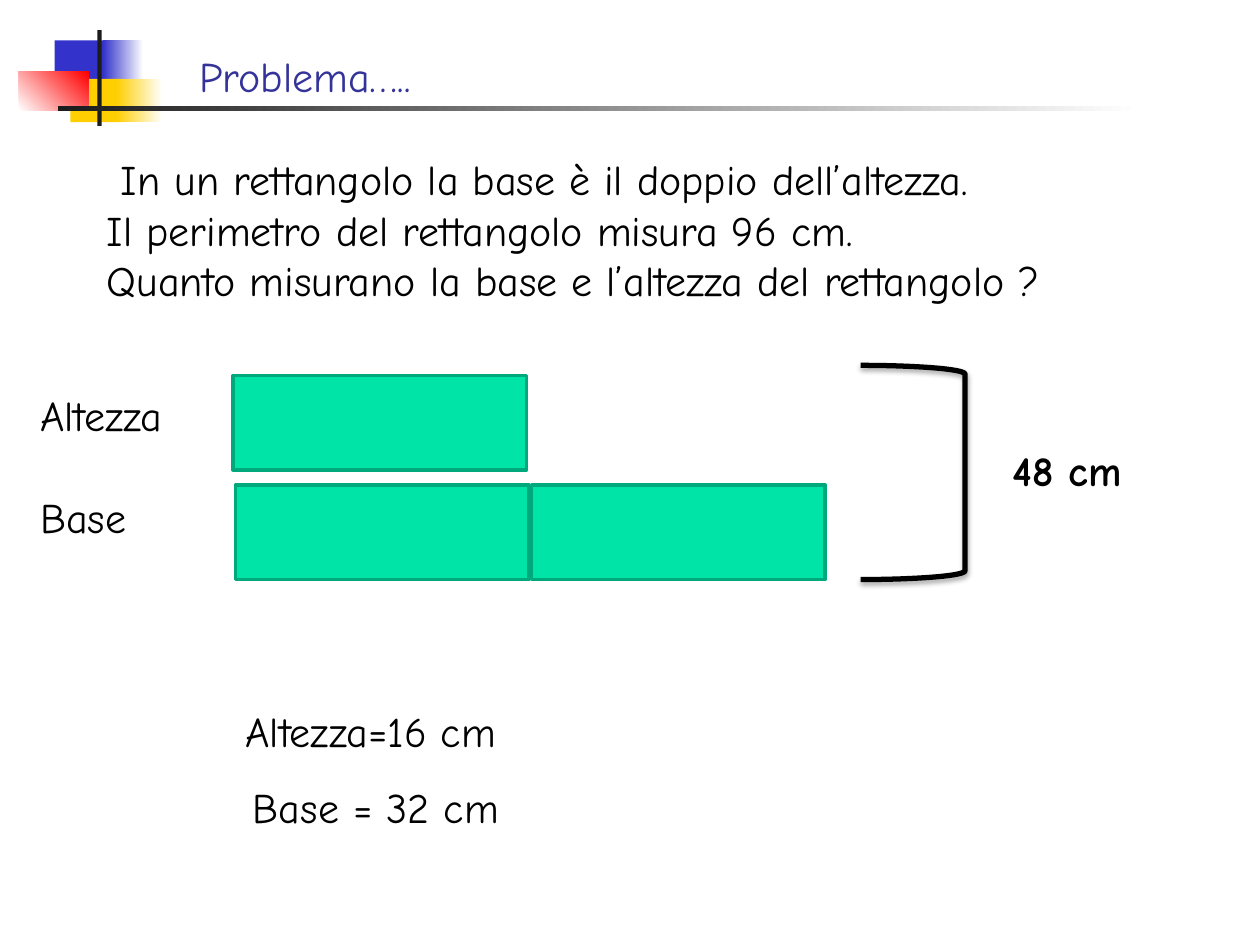
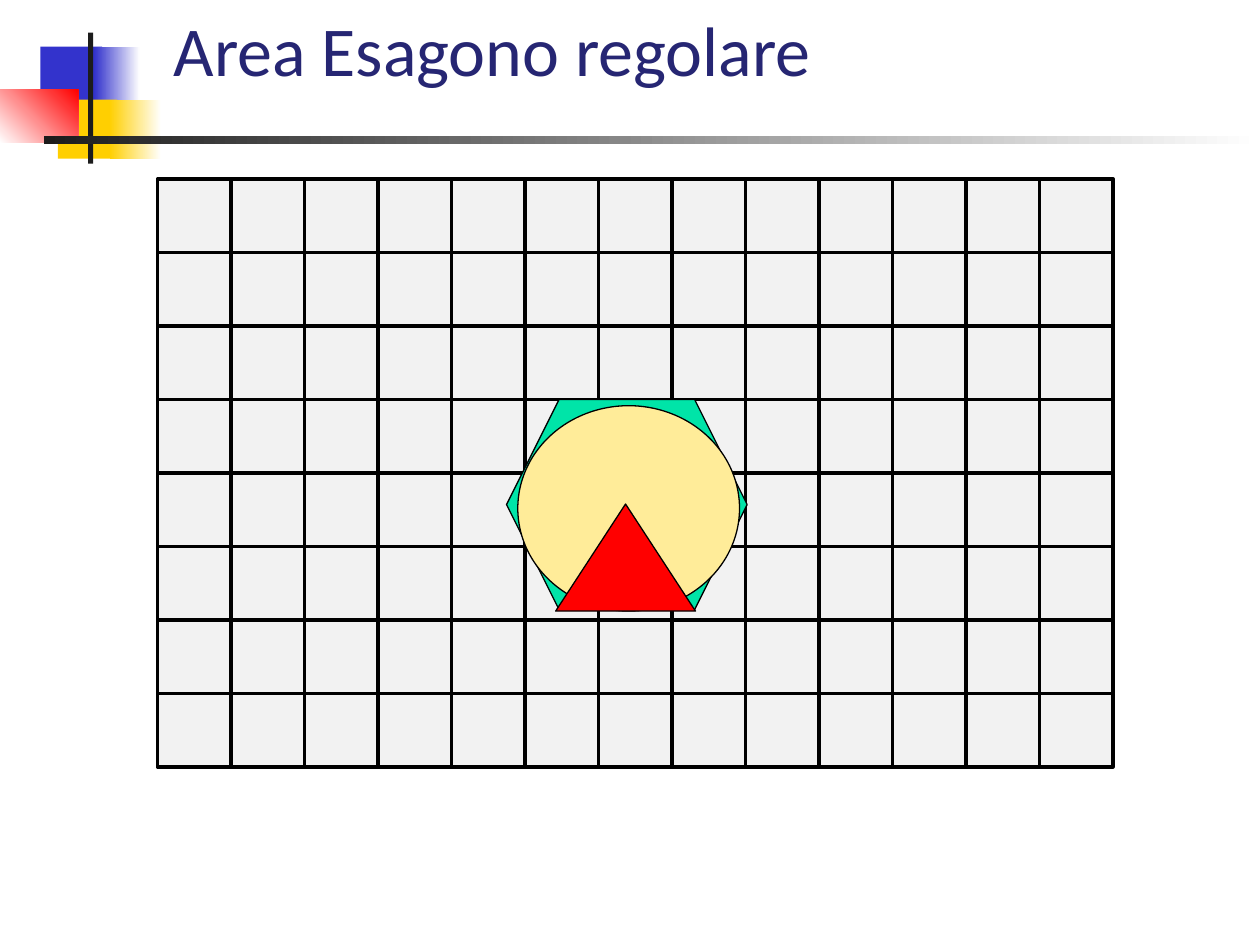
from dataclasses import dataclass
from itertools import product

from lxml import etree
from pptx import Presentation
from pptx.dml.color import RGBColor
from pptx.enum import shapes as kinds
from pptx.enum import text as txt
from pptx.oxml import ns
from pptx.util import Inches, Pt

KIND = kinds.MSO_SHAPE


@dataclass(frozen=True)
class Theme:
    body_font: str = "Comic Neue"
    heading_font: str = "Calibri"
    body_size: int = 24
    heading_size: int = 40
    ink: str = "000000"
    paper: str = "FFFFFF"
    title: str = "333399"
    heading: str = "262673"
    blue: str = "3333CC"
    yellow: str = "FFCF01"
    red: str = "FF0000"
    rule: str = "1C1C1C"
    green: str = "00E4A8"
    green_edge: str = "00A97C"
    cream: str = "FFEC99"
    square: str = "F2F2F2"


THEME = Theme()


def rgb(value):
    return RGBColor.from_string(value)


def apply(target, values):
    for name, value in values.items():
        setattr(target, name, value)


def add_figure(slide, kind, place, fill=None, line=None, width=0.75):
    figure = slide.shapes.add_shape(kind, *map(Inches, place))
    figure.shadow.inherit = False
    if fill:
        figure.fill.solid()
        figure.fill.fore_color.rgb = rgb(fill)
    else:
        figure.fill.background()
    if line:
        figure.line.color.rgb = rgb(line)
        figure.line.width = Pt(width)
    else:
        figure.line.fill.background()
    return figure


def add_fade(slide, place, start, end, angle=0):
    fade = add_figure(slide, KIND.RECTANGLE, place)
    fade.fill.gradient()
    fade.fill.gradient_angle = angle
    for stop, color in zip(fade.fill.gradient_stops, (start, end)):
        stop.color.rgb = rgb(color)


def add_words(slide, place, *lines, color=THEME.ink, **font):
    frame = slide.shapes.add_textbox(*map(Inches, place)).text_frame
    apply(frame, {"word_wrap": True, "vertical_anchor": txt.MSO_ANCHOR.TOP})
    look = {"name": THEME.body_font, "size": Pt(THEME.body_size), **font}
    for index, line in enumerate(lines):
        paragraph = frame.add_paragraph() if index else frame.paragraphs[0]
        run = paragraph.add_run()
        run.text = line
        apply(run.font, look)
        run.font.color.rgb = rgb(color)


def add_soft_shadow(figure):
    effects = figure._element.spPr.find(ns.qn("a:effectLst"))
    shadow = etree.SubElement(
        effects, ns.qn("a:outerShdw"), blurRad=str(Pt(3.1)),
        dist=str(Pt(1.8)), dir="5400000", rotWithShape="0")
    color = etree.SubElement(shadow, ns.qn("a:srgbClr"), val=THEME.ink)
    etree.SubElement(color, ns.qn("a:alpha"), val="35000")


def add_emblem(slide, left=0, top=0, across=1, down=1):
    def spot(x, y, width, height):
        return left + x * across, top + y * down, width * across, height * down

    def block(color, *place):
        add_figure(slide, KIND.RECTANGLE, spot(*place), color)

    block(THEME.blue, 0.32, 0.37, 0.49, 0.47)
    add_fade(slide, spot(0.75, 0.37, 0.36, 0.47), THEME.blue, THEME.paper)
    block(THEME.yellow, 0.46, 0.79, 0.47, 0.47)
    add_fade(slide, spot(0.87, 0.79, 0.41, 0.47), THEME.yellow, THEME.paper)
    add_fade(slide, spot(0, 0.71, 0.62, 0.42), THEME.paper, THEME.red, 45)
    block(THEME.rule, 0.7, 0.26, 0.04, 1.04)
    add_fade(slide, spot(0.35, 1.08, 9.65, 0.06), THEME.rule, THEME.paper)


def add_unit_bar(slide, left, top):
    add_figure(slide, KIND.RECTANGLE, (left, top, 2.33, 0.75),
               THEME.green, THEME.green_edge, 2)


def add_squared_paper(slide, left, top, columns, rows, side):
    for row, column in product(range(rows), range(columns)):
        place = (left + column * side, top + row * side, side, side)
        add_figure(slide, KIND.RECTANGLE, place, THEME.square, THEME.ink, 2)


def build_problem(slide):
    add_words(slide, (0.75, 1.17, 8.67, 1.72),
              " In un rettangolo la base è il doppio dell’altezza.",
              "Il perimetro del rettangolo misura 96 cm.",
              "Quanto misurano la base e l’altezza del rettangolo ?")
    add_emblem(slide, 0.15, 0.05, 0.89, 0.73)
    add_words(slide, (1.37, 0.35, 8.15, 0.5), " Problema…..", color=THEME.title)

    for left, top in ((1.85, 2.98), (1.87, 3.85), (4.22, 3.85)):
        add_unit_bar(slide, left, top)
    half_perimeter = add_figure(slide, KIND.RIGHT_BRACKET,
                                (6.83, 2.9, 0.83, 1.7), line=THEME.ink, width=3)
    add_soft_shadow(half_perimeter)
    add_words(slide, (7.94, 3.48, 1.86, 0.5), "48 cm", bold=True)

    for left, top, width, label in (
        (0.22, 3.04, 1.83, "Altezza"),
        (0.22, 3.85, 1.83, "Base"),
        (1.85, 5.55, 2.92, "Altezza=16 cm"),
        (1.91, 6.15, 2.27, "Base = 32 cm"),
    ):
        add_words(slide, (left, top, width, 0.5), label)


def build_hexagon(slide):
    add_squared_paper(slide, 1.25, 1.42, columns=13, rows=8, side=7 / 12)
    add_words(slide, (1.28, 0, 8.72, 0.77), "Area Esagono regolare",
              color=THEME.heading, name=THEME.heading_font,
              size=Pt(THEME.heading_size))
    add_emblem(slide)
    for kind, place, fill in (
        (KIND.HEXAGON, (4.02, 3.17, 1.91, 1.67), THEME.green),
        (KIND.OVAL, (4.11, 3.22, 1.76, 1.63), THEME.cream),
        (KIND.ISOSCELES_TRIANGLE, (4.41, 4, 1.11, 0.85), THEME.red),
    ):
        add_figure(slide, kind, place, fill, THEME.ink)


def main():
    deck = Presentation()
    apply(deck, {"slide_width": Inches(10), "slide_height": Inches(7.5)})
    for build in (build_problem, build_hexagon):
        build(deck.slides.add_slide(deck.slide_layouts[6]))
    deck.save("out.pptx")


if __name__ == "__main__":
    main()
